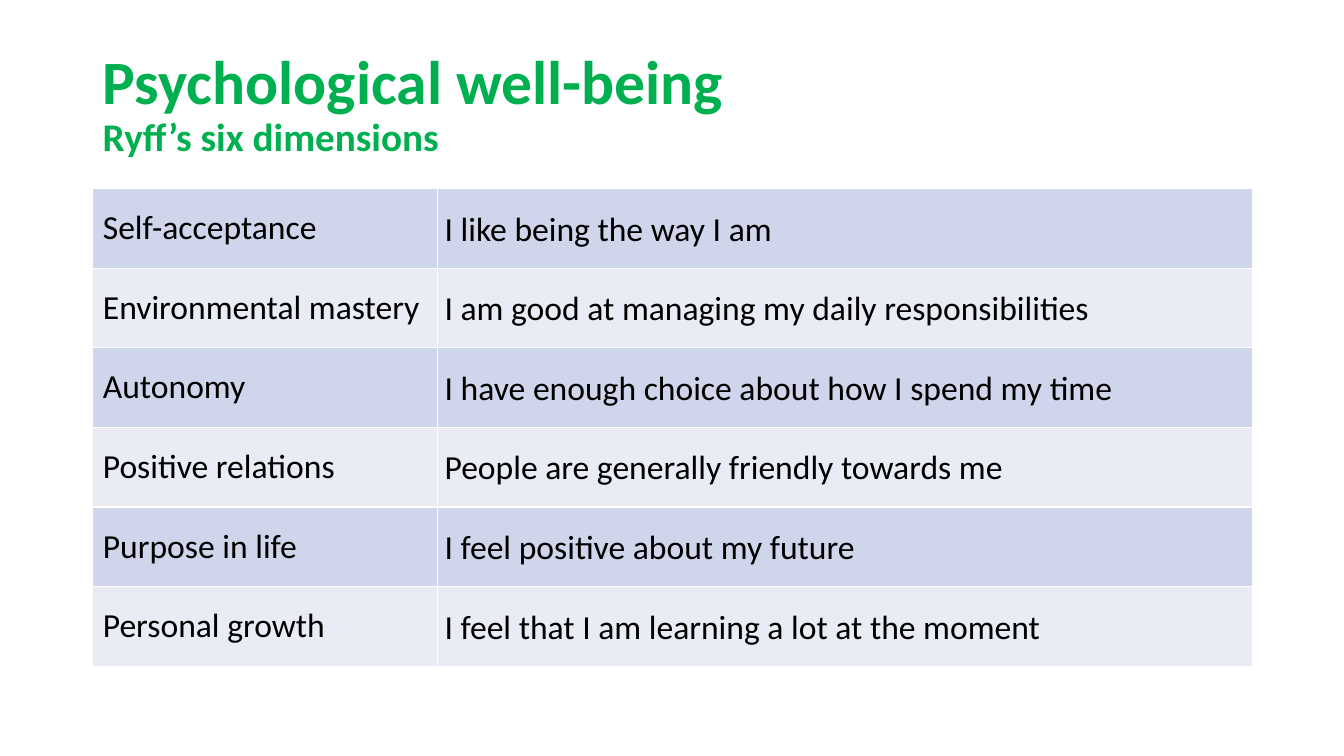
"""Build a slide listing Ryff's six dimensions of psychological well-being."""
from lxml import etree
from pptx import Presentation
from pptx.dml.color import RGBColor
from pptx.enum.text import MSO_ANCHOR
from pptx.oxml.ns import qn
from pptx.util import Inches, Pt

MIDDLE = MSO_ANCHOR.MIDDLE
GREEN = RGBColor(0x00, 0xB0, 0x50)
BLACK = RGBColor(0x00, 0x00, 0x00)
BAND_FILLS = [RGBColor(0xCF, 0xD5, 0xEA), RGBColor(0xE9, 0xEB, 0xF5)]
BORDER_HEX = "FFFFFF"
DIMENSIONS = [
    ("Self-acceptance", "I like being the way I am"),
    ("Environmental mastery", "I am good at managing my daily responsibilities"),
    ("Autonomy", "I have enough choice about how I spend my time"),
    ("Positive relations", "People are generally friendly towards me"),
    ("Purpose in life", "I feel positive about my future"),
    ("Personal growth", "I feel that I am learning a lot at the moment"),
]
COLUMN_WIDTHS = [3.42, 8.08]
ROW_HEIGHT = 0.79


def write(paragraph, text, size=24, color=BLACK, bold=False, spacing=1.0):
    paragraph.line_spacing = spacing
    run = paragraph.add_run()
    run.text = text
    run.font.name = "Calibri"
    run.font.size = Pt(size)
    run.font.bold = bold
    run.font.color.rgb = color


def add_borders(cell):
    properties = cell._tc.get_or_add_tcPr()
    for position, side in enumerate(("a:lnL", "a:lnR", "a:lnT", "a:lnB")):
        border = etree.Element(qn(side), w=str(Pt(1)))
        fill = etree.SubElement(border, qn("a:solidFill"))
        etree.SubElement(fill, qn("a:srgbClr"), val=BORDER_HEX)
        properties.insert(position, border)


presentation = Presentation()
presentation.slide_width = Inches(13.33)
presentation.slide_height = Inches(7.5)
slide = presentation.slides.add_slide(presentation.slide_layouts[6])

heading = slide.shapes.add_textbox(
    Inches(0.92), Inches(0.4), Inches(8.6), Inches(1.29)).text_frame
heading.word_wrap = True
heading.vertical_anchor = MIDDLE
title_line = heading.paragraphs[0]
write(title_line, "Psychological well-being", size=44, color=GREEN, bold=True, spacing=0.9)
title_line.add_line_break()
write(title_line, "Ryff’s six dimensions", size=28, color=GREEN, bold=True, spacing=0.9)

dimensions = slide.shapes.add_table(
    len(DIMENSIONS), len(COLUMN_WIDTHS), Inches(0.92), Inches(1.87),
    Inches(sum(COLUMN_WIDTHS)), Inches(ROW_HEIGHT * len(DIMENSIONS))).table
dimensions.first_row = False
dimensions.horz_banding = False
for column, width in zip(dimensions.columns, COLUMN_WIDTHS):
    column.width = Inches(width)

for row_number, (dimension, statement) in enumerate(DIMENSIONS):
    dimensions.rows[row_number].height = Inches(ROW_HEIGHT)
    dimension_cell, statement_cell = dimensions.rows[row_number].cells
    write(dimension_cell.text_frame.paragraphs[0], dimension)
    write(statement_cell.text_frame.paragraphs[0], statement, spacing=1.07)
    statement_cell.margin_left = statement_cell.margin_right = Inches(0.07)
    statement_cell.margin_top = statement_cell.margin_bottom = Inches(0)
    for cell in (dimension_cell, statement_cell):
        cell.vertical_anchor = MIDDLE
        cell.fill.solid()
        cell.fill.fore_color.rgb = BAND_FILLS[row_number % 2]
        add_borders(cell)

presentation.save("out.pptx")
